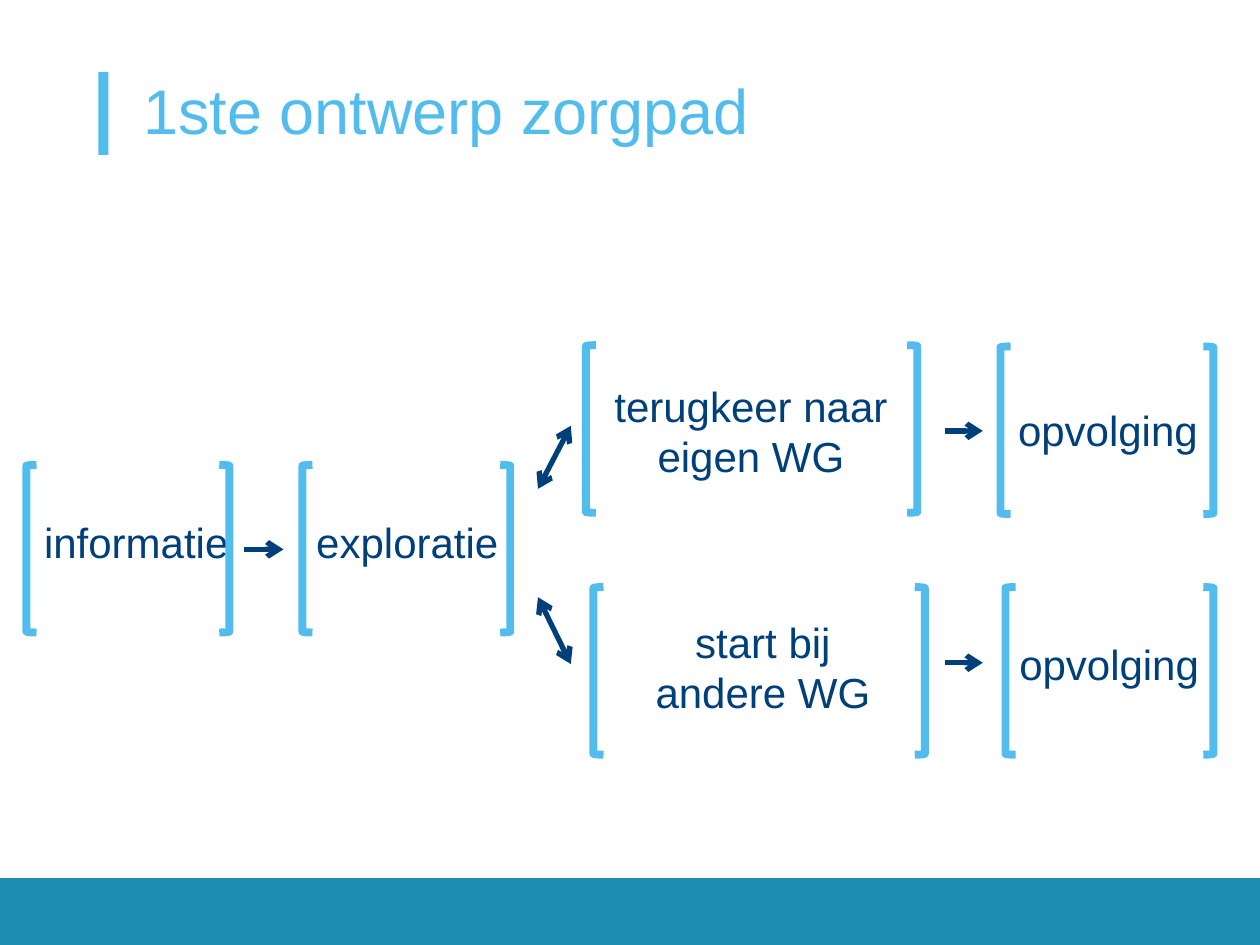
from lxml import etree
from pptx import Presentation
from pptx.dml.color import RGBColor
from pptx.enum.shapes import MSO_CONNECTOR, MSO_SHAPE
from pptx.enum.text import MSO_AUTO_SIZE, PP_ALIGN
from pptx.oxml.ns import qn
from pptx.util import Inches, Pt

RECT = MSO_SHAPE.RECTANGLE
LEFT_BRACKET = MSO_SHAPE.LEFT_BRACKET
RIGHT_BRACKET = MSO_SHAPE.RIGHT_BRACKET
STRAIGHT = MSO_CONNECTOR.STRAIGHT
LEFT, CENTER = PP_ALIGN.LEFT, PP_ALIGN.CENTER
FIT_SHAPE = MSO_AUTO_SIZE.SHAPE_TO_FIT_TEXT

TEAL = RGBColor(0x1D, 0x8D, 0xB0)
SKY = RGBColor(0x52, 0xBD, 0xEC)
NAVY = RGBColor(0x00, 0x40, 0x7A)

BRACKET_W, BRACKET_H = 0.08, 1.33

TITLE = "1ste ontwerp zorgpad"
BARS = [((0, 6.97, 10, 0.53), TEAL), ((0.78, 0.57, 0.08, 0.66), SKY)]

# lines, text box, left bracket x, right bracket x, bracket top
STEPS = [
    (["informatie"], (0.24, 4.04, 1.7, 0.52), 0.21, 1.74, 3.69),
    (["exploratie"], (2.4, 4.04, 1.69, 0.52), 2.4, 3.97, 3.69),
    (["terugkeer naar", "eigen WG"], (4.75, 2.96, 2.42, 0.92), 4.65, 7.2, 2.74),
    (["start bij", "andere WG"], (5.08, 4.83, 1.95, 0.92), 4.71, 7.26, 4.66),
    (["opvolging"], (7.97, 3.15, 1.67, 0.52), 7.94, 9.55, 2.75),
    (["opvolging"], (7.98, 5.01, 1.67, 0.52), 7.98, 9.55, 4.66),
]

ARROWS = [
    ((1.94, 4.36), (2.25, 4.36), False),
    ((7.5, 3.42), (7.8, 3.42), False),
    ((7.5, 5.26), (7.8, 5.26), False),
    ((4.27, 3.88), (4.53, 3.38), True),
    ((4.27, 4.74), (4.53, 5.27), True),
]


def add_bar(slide, box, color):
    sp = slide.shapes.add_shape(RECT, *map(Inches, box))
    sp.shadow.inherit = False
    sp.fill.solid()
    sp.fill.fore_color.rgb = color
    sp.line.fill.background()


def add_bracket(slide, kind, x, y):
    sp = slide.shapes.add_shape(kind, *map(Inches, (x, y, BRACKET_W, BRACKET_H)))
    sp.shadow.inherit = False
    sp.fill.background()
    sp.line.color.rgb = SKY
    sp.line.width = Pt(4.5)


def add_text(slide, lines, box, size, color, wrap):
    tf = slide.shapes.add_textbox(*map(Inches, box)).text_frame
    tf.word_wrap = wrap
    tf.auto_size = FIT_SHAPE
    for i, line in enumerate(lines):
        p = tf.add_paragraph() if i else tf.paragraphs[0]
        p.text = line
        p.alignment = CENTER if len(lines) > 1 else LEFT
        p.font.name = "Arial"
        p.font.size = Pt(size)
        p.font.color.rgb = color
    return tf


def add_arrow(slide, start, end, both):
    cn = slide.shapes.add_connector(STRAIGHT, *map(Inches, start + end))
    cn.line.color.rgb = NAVY
    cn.line.width = Pt(3)
    ln = cn.line._get_or_add_ln()
    for tag in ("a:headEnd", "a:tailEnd") if both else ("a:tailEnd",):
        etree.SubElement(ln, qn(tag), type="arrow")
    etree.SubElement(cn._element.spPr, qn("a:effectLst"))


def main():
    prs = Presentation()
    prs.slide_width, prs.slide_height = Inches(10), Inches(7.5)
    slide = prs.slides.add_slide(prs.slide_layouts[6])
    for box, color in BARS:
        add_bar(slide, box, color)
    for lines, box, left, right, top in STEPS:
        tf = add_text(slide, lines, box, 24, NAVY, False)
        tf.margin_left = tf.margin_right = Inches(0.11)
        tf.margin_top = tf.margin_bottom = Inches(0.06)
        add_bracket(slide, LEFT_BRACKET, left, top)
        add_bracket(slide, RIGHT_BRACKET, right, top)
    for start, end, both in ARROWS:
        add_arrow(slide, start, end, both)
    add_text(slide, [TITLE], (1.04, 0.52, 7.2, 0.71), 36, SKY, True)
    prs.save("out.pptx")


if __name__ == "__main__":
    main()
